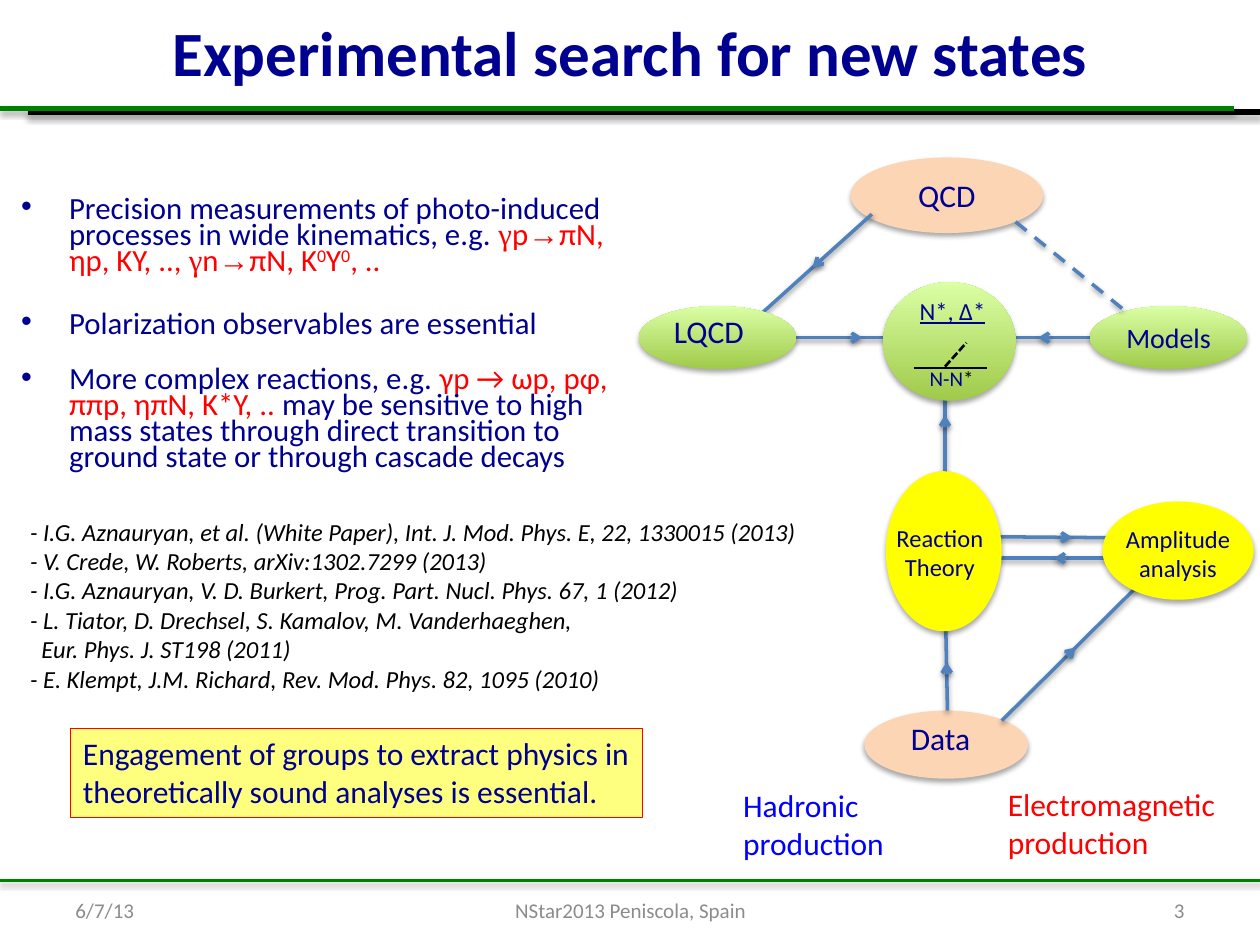
from dataclasses import dataclass
from typing import Optional

from pptx import Presentation
from pptx.dml.color import RGBColor
from pptx.enum.dml import MSO_LINE
from pptx.enum.shapes import MSO_CONNECTOR, MSO_SHAPE
from pptx.enum.text import MSO_ANCHOR, PP_ALIGN
from pptx.oxml import parse_xml
from pptx.oxml.ns import nsdecls, qn
from pptx.util import Inches, Pt

NAVY = RGBColor(0x00, 0x00, 0x90)
BLUE = RGBColor(0x00, 0x00, 0xFF)
RED = RGBColor(0xFF, 0x00, 0x00)
GREEN = RGBColor(0x00, 0x80, 0x00)
BLACK = RGBColor(0x00, 0x00, 0x00)
GRAY = RGBColor(0x8C, 0x8C, 0x8C)
STEEL = RGBColor(0x4F, 0x81, 0xBD)
PEACH = RGBColor(0xFC, 0xD5, 0xB5)
YELLOW = RGBColor(0xFF, 0xFF, 0x00)
LEAF = RGBColor(0xA0, 0xCA, 0x4A)
LIME = RGBColor(0xDA, 0xFF, 0xA5)

SANS = "Calibri"
SERIF = "Times New Roman"
MARKER_LENGTH = 0.06


@dataclass(frozen=True)
class Span:
    text: str
    color: Optional[RGBColor] = None
    font: str = SANS
    baseline: int = 0


@dataclass(frozen=True)
class Node:
    left: float
    top: float
    width: float
    height: float
    fill: RGBColor
    text: str = ""
    size: float = 18
    fade: Optional[RGBColor] = None


@dataclass(frozen=True)
class Link:
    start: tuple[float, float]
    end: tuple[float, float]
    marker: float = 0.5


@dataclass(frozen=True)
class Label:
    place: tuple[float, float, float, float]
    lines: tuple
    size: float = 18
    color: RGBColor = NAVY
    align: PP_ALIGN = PP_ALIGN.LEFT
    underline: bool = False


def write(shape, lines, size=18, color=NAVY, align=PP_ALIGN.LEFT, wrap=True,
          anchor=MSO_ANCHOR.TOP, bold=False, italic=False, underline=False,
          bullet=False, spacing=None, gaps=(), indents=()):
    frame = shape.text_frame
    frame.word_wrap = wrap
    frame.vertical_anchor = anchor
    for index, line in enumerate(lines):
        para = frame.paragraphs[0] if index == 0 else frame.add_paragraph()
        para.alignment = align
        properties = para._p.get_or_add_pPr()
        if index < len(indents):
            properties.set("marL", str(Inches(indents[index])))
        if bullet:
            properties.set("indent", str(-Inches(indents[index])))
            properties.append(parse_xml(f'<a:buFont {nsdecls("a")} typeface="Arial"/>'))
            properties.append(parse_xml(f'<a:buChar {nsdecls("a")} char="•"/>'))
        if spacing:
            para.line_spacing = spacing
        if index < len(gaps):
            para.space_before = Pt(gaps[index])
        for span in (Span(line),) if isinstance(line, str) else line:
            run = para.add_run()
            run.text = span.text
            font = run.font
            font.name, font.size = span.font, Pt(size)
            font.bold, font.italic, font.underline = bold, italic, underline
            font.color.rgb = span.color or color
            if span.baseline:
                run._r.get_or_add_rPr().set("baseline", str(span.baseline * 1000))


def add_text(page, place, lines, **style):
    box = page.shapes.add_textbox(*map(Inches, place))
    write(box, lines, **style)
    return box


def add_shadow(shape, alpha: int, blur: float, distance: float):
    shape._element.spPr.append(parse_xml(
        f'<a:effectLst {nsdecls("a")}><a:outerShdw blurRad="{Pt(blur)}" '
        f'dist="{Pt(distance)}" dir="5400000" rotWithShape="0"><a:srgbClr val="000000">'
        f'<a:alpha val="{alpha * 1000}"/></a:srgbClr></a:outerShdw></a:effectLst>'))


def add_line(page, start, end, color=STEEL, width=2.0, dash=None, arrow=False,
             shadow=True, distance=1.6):
    line = page.shapes.add_connector(MSO_CONNECTOR.STRAIGHT, *map(Inches, (*start, *end)))
    line.line.color.rgb = color
    line.line.width = Pt(width)
    if dash:
        line.line.dash_style = dash
    if arrow:
        line.line._get_or_add_ln().append(
            parse_xml(f'<a:tailEnd {nsdecls("a")} type="arrow"/>'))
    if shadow:
        add_shadow(line, 38, 3.1, distance)
    else:
        line._element.spPr.append(parse_xml(f'<a:effectLst {nsdecls("a")}/>'))


def add_link(page, link: Link):
    add_line(page, link.start, link.end)
    (x, y), (end_x, end_y) = link.start, link.end
    span_x, span_y = end_x - x, end_y - y
    half = MARKER_LENGTH / 2 / (span_x ** 2 + span_y ** 2) ** 0.5
    tail, head = ((x + span_x * part, y + span_y * part)
                  for part in (link.marker - half, link.marker + half))
    add_line(page, tail, head, arrow=True)


def add_node(page, node: Node):
    shape = page.shapes.add_shape(
        MSO_SHAPE.OVAL, *map(Inches, (node.left, node.top, node.width, node.height)))
    if node.fade:
        shape.fill.gradient()
        shape.fill.gradient_angle = 90
        for stop, color, position in zip(shape.fill.gradient_stops, (node.fill, node.fade), (0, 1)):
            stop.color.rgb = color
            stop.position = position
    else:
        shape.fill.solid()
        shape.fill.fore_color.rgb = node.fill
    shape.line.fill.background()
    add_shadow(shape, 35, 3.1, 1.8)
    if node.text:
        write(shape, [node.text], size=node.size, align=PP_ALIGN.CENTER, anchor=MSO_ANCHOR.MIDDLE)


BULLETS = [
    [Span("Precision measurements of photo-induced processes in wide kinematics, e.g. "),
     Span("γ", RED, SERIF), Span("p", RED), Span("→", RED, SERIF),
     Span("πN, ηp, KY, .., ", RED), Span("γ", RED, SERIF), Span("n", RED),
     Span("→", RED, SERIF), Span("πN, K", RED), Span("0", RED, baseline=30),
     Span("Y", RED), Span("0", RED, baseline=30), Span(", ..", RED)],
    "Polarization observables are essential",
    [Span("More complex reactions, e.g. "), Span("γp → ωp, pφ, ππp, ηπN, K*Y, .. ", RED),
     Span("may be sensitive to high mass states through direct transition to "
          "ground state or through cascade decays")],
]
REFERENCES = [
    "- I.G. Aznauryan, et al. (White Paper), Int. J. Mod. Phys. E, 22, 1330015 (2013)",
    "- V. Crede, W. Roberts, arXiv:1302.7299 (2013)",
    "- I.G. Aznauryan, V. D. Burkert, Prog. Part. Nucl. Phys. 67, 1 (2012)",
    "- L. Tiator, D. Drechsel, S. Kamalov, M. Vanderhaeghen,",
    "Eur. Phys. J. ST198 (2011)",
    "- E. Klempt, J.M. Richard, Rev. Mod. Phys. 82, 1095 (2010)",
]
SOURCES = [Node(6.86, 5.64, 1.3, 0.54, PEACH), Node(6.75, 1.25, 1.53, 0.6, PEACH, "QCD")]
LINKS = [
    Link((7.5, 3.93), (7.5, 2.72)), Link((6.92, 1.7), (6.02, 2.51)),
    Link((6.21, 2.68), (7.42, 2.68)), Link((8.87, 2.68), (7.67, 2.68)),
    Link((7.52, 5.64), (7.5, 4.68), 0.37), Link((7.95, 5.72), (9.08, 4.6)),
    Link((7.88, 4.26), (9.08, 4.27)), Link((9, 4.43), (7.79, 4.43)),
]
METHODS = [
    Node(5.07, 2.43, 1.25, 0.5, LEAF, fade=LIME),
    Node(8.65, 2.43, 1.25, 0.5, LEAF, "Models", 16, LIME),
    Node(7.01, 2.24, 1.05, 0.94, LEAF, fade=LIME),
    Node(7.03, 3.74, 0.92, 1.27, YELLOW), Node(8.75, 3.98, 1.2, 0.78, YELLOW),
]
LABELS = [
    Label((5.8, 6.19, 1.33, 0.71), ("Hadronic", "production"), color=BLUE),
    Label((7.9, 6.18, 1.87, 0.71), ("Electromagnetic", "production"), color=RED),
    Label((7.13, 5.66, 0.68, 0.4), ("Data",)),
    Label((5.25, 2.43, 0.77, 0.4), ("LQCD",)),
    Label((7.28, 2.85, 0.55, 0.3), ((Span("N-N"), Span("*", BLACK)),), 12),
    Label((8.83, 4.11, 1.04, 0.57), ("Amplitude", "analysis"), 14, align=PP_ALIGN.CENTER),
    Label((7.01, 4.1, 0.9, 0.57), ("Reaction", "Theory"), 14, align=PP_ALIGN.CENTER),
    Label((7.2, 2.3, 0.73, 0.34), ("N*, Δ*",), 14, underline=True),
]
FOOTERS = [
    Label((0.5, 7.02, 2.33, 0.4), ("6/7/13",), 12, GRAY),
    Label((3.42, 7.02, 3.17, 0.4), ("NStar2013 Peniscola, Spain",), 12, GRAY, PP_ALIGN.CENTER),
    Label((7.17, 7.02, 2.33, 0.4), ("3",), 12, GRAY, PP_ALIGN.RIGHT),
]


def add_callout(page):
    callout = page.shapes.add_shape(MSO_SHAPE.RECTANGLE, *map(Inches, (0.56, 5.78, 4.54, 0.71)))
    callout.shadow.inherit = False
    callout.fill.solid()
    callout.fill.fore_color.rgb = YELLOW
    color = callout._element.spPr.find(qn("a:solidFill")).find(qn("a:srgbClr"))
    color.append(parse_xml(f'<a:alpha {nsdecls("a")} val="50000"/>'))
    callout.line.color.rgb = RED
    callout.line.width = Pt(0.75)
    write(callout, ["Engagement of groups to extract physics in "
                    "theoretically sound analyses is essential."])


def main():
    deck = Presentation()
    deck.slide_width, deck.slide_height = Inches(10), Inches(7.5)
    page = deck.slides.add_slide(deck.slide_layouts[6])
    add_line(page, (0.22, 0.89), (10, 0.89), BLACK, 3, distance=2.6)
    add_line(page, (0, 0.86), (9.79, 0.86), GREEN, 3)
    add_line(page, (0, 6.99), (10, 6.99), GREEN, 1.5)
    add_text(page, (0, 0, 10, 0.81), ["Experimental search for new states"], size=36,
             bold=True, align=PP_ALIGN.CENTER, anchor=MSO_ANCHOR.MIDDLE)
    add_text(page, (0.07, 1.53, 5.06, 2.43), BULLETS, size=17.6, bullet=True,
             spacing=0.7, gaps=(0, 21, 17), indents=(0.38,) * 3)
    add_text(page, (0.14, 4.05, 6.4, 1.51), REFERENCES, size=14, color=BLACK,
             italic=True, indents=(0, 0, 0, 0, 0.09, 0))
    add_callout(page)
    for node in SOURCES:
        add_node(page, node)
    for link in LINKS:
        add_link(page, link)
    for node in METHODS:
        add_node(page, node)
    add_line(page, (8.06, 1.76), (8.97, 2.5), dash=MSO_LINE.DASH)
    add_line(page, (7.25, 2.92), (7.83, 2.92), BLACK, 1.5, shadow=False)
    add_line(page, (7.5, 2.91), (7.67, 2.72), BLACK, 1.5, MSO_LINE.SQUARE_DOT, shadow=False)
    for label in LABELS + FOOTERS:
        footer = label in FOOTERS
        add_text(page, label.place, label.lines, size=label.size, color=label.color,
                 align=label.align, underline=label.underline, wrap=footer,
                 anchor=MSO_ANCHOR.MIDDLE if footer else MSO_ANCHOR.TOP)
    deck.save("out.pptx")


if __name__ == "__main__":
    main()
